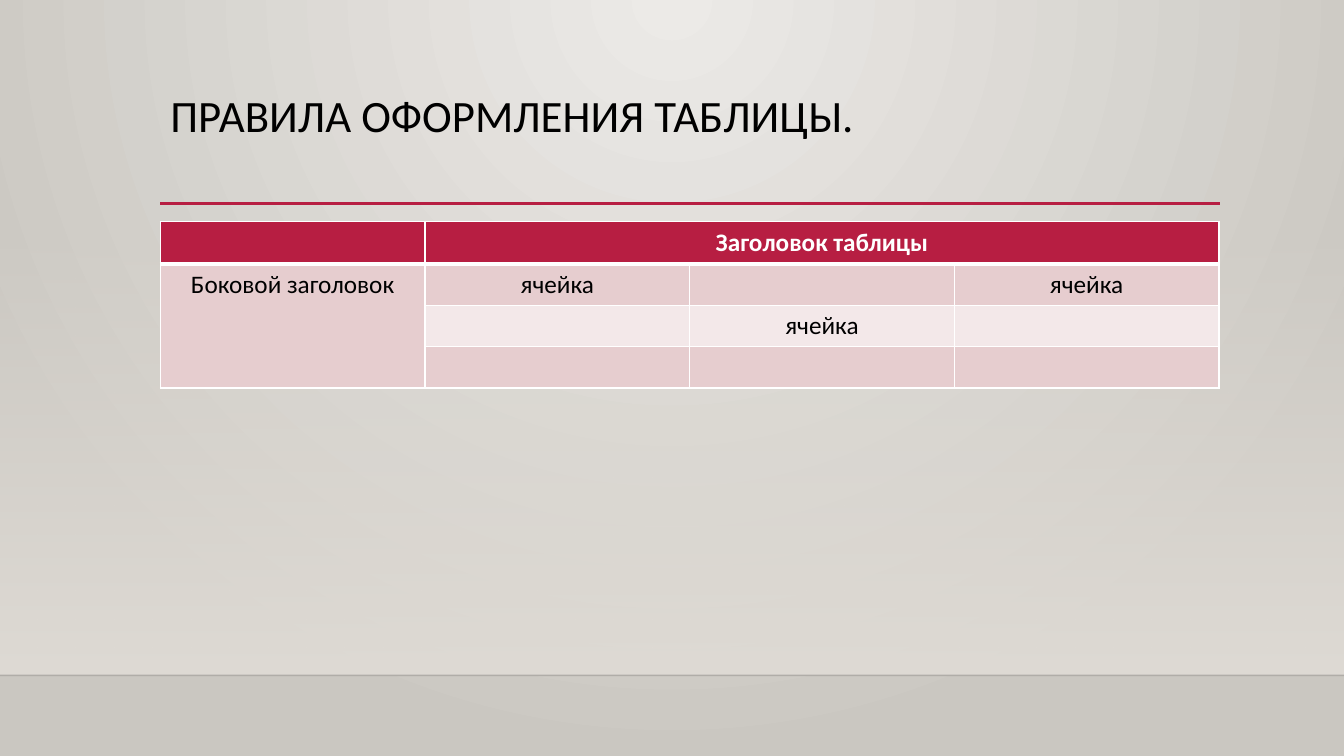
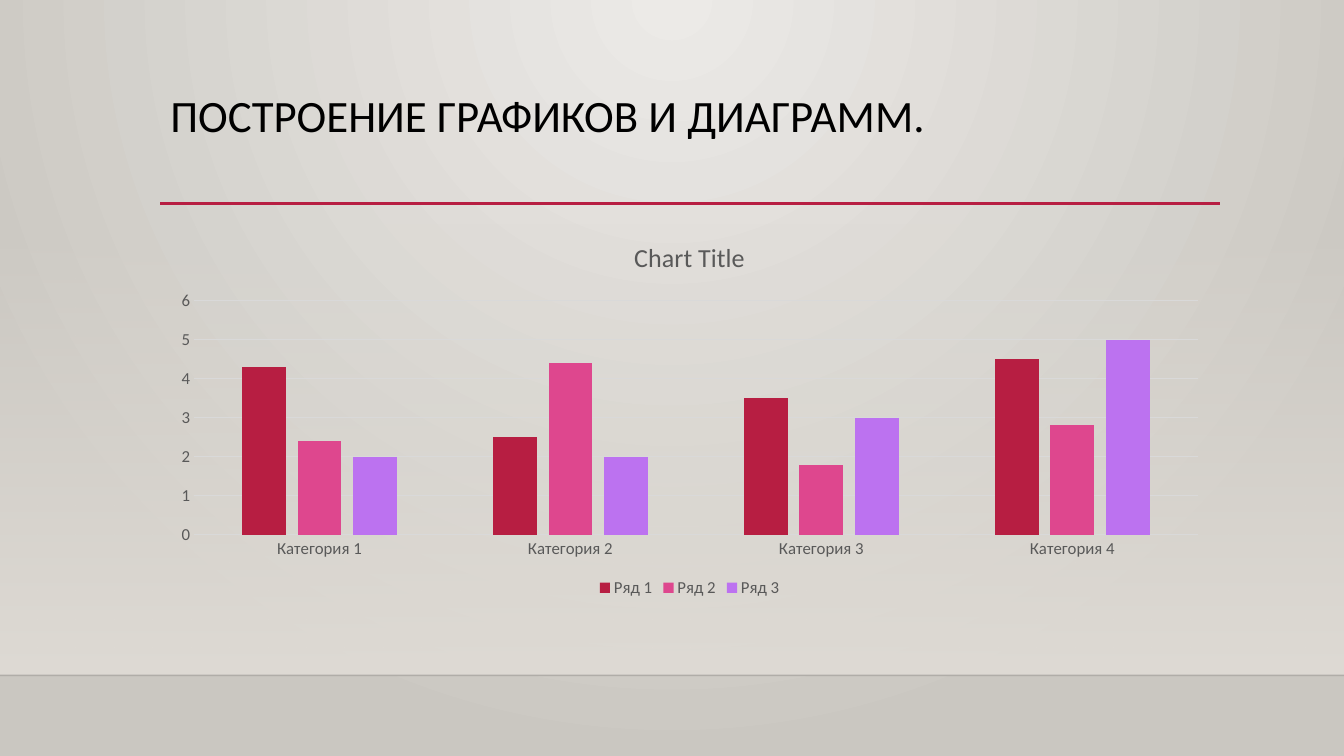
from typing import NamedTuple

from lxml.etree import SubElement
from pptx import Presentation
from pptx.chart.data import CategoryChartData as ChartData
from pptx.dml.color import RGBColor
from pptx.enum.chart import XL_CHART_TYPE as Kind
from pptx.enum.chart import XL_LEGEND_POSITION as Spot
from pptx.enum.chart import XL_TICK_MARK as Tick
from pptx.enum.shapes import MSO_CONNECTOR as Wire
from pptx.enum.shapes import MSO_SHAPE as Shape
from pptx.enum.text import MSO_ANCHOR as Anchor
from pptx.enum.text import MSO_AUTO_SIZE as Fit
from pptx.enum.text import PP_ALIGN as Align
from pptx.oxml.ns import qn
from pptx.slide import Slide
from pptx.util import Inches, Pt

FONT = "Calibri"
BLACK = RGBColor(0x00, 0x00, 0x00)
WHITE = RGBColor(0xFF, 0xFF, 0xFF)
RED = RGBColor(0xB7, 0x1E, 0x42)
PINK = RGBColor(0xDE, 0x47, 0x8E)
LILAC = RGBColor(0xBC, 0x72, 0xF0)
ROSE = RGBColor(0xE6, 0xCD, 0xCF)
BLUSH = RGBColor(0xF3, 0xE8, 0xE9)
GREY = RGBColor(0x59, 0x59, 0x59)
SILVER = RGBColor(0xD9, 0xD9, 0xD9)
LIGHT = RGBColor(0xEC, 0xEA, 0xE7)
STONE = RGBColor(0xCA, 0xC7, 0xC1)
SAND = RGBColor(0xDF, 0xDB, 0xD5)

WIDE, HIGH = 13.33, 7.5
LEFT, TOP, SPAN = 1.59, 2.2, 10.5
FLOOR = 6.7


class Rule(NamedTuple):
    start: float
    end: float
    y: float
    color: RGBColor
    size: float
    alpha: int = 100


class Series(NamedTuple):
    name: str
    color: RGBColor
    vals: tuple[float, ...]


class Entry(NamedTuple):
    row: int
    col: int
    text: str


RULES = (
    Rule(0, WIDE, FLOOR, BLACK, 1, 20),
    Rule(LEFT, 12.1, 2.02, RED, 2.5),
)
ENTRIES = (
    Entry(0, 1, "Заголовок таблицы"),
    Entry(1, 0, "Боковой заголовок"),
    Entry(1, 1, "ячейка"),
    Entry(1, 3, "ячейка"),
    Entry(2, 2, "ячейка"),
)
SERIES = (
    Series("Ряд 1", RED, (4.3, 2.5, 3.5, 4.5)),
    Series("Ряд 2", PINK, (2.4, 4.4, 1.8, 2.8)),
    Series("Ряд 3", LILAC, (2, 2, 3, 5)),
)


def style(font, size: float, color: RGBColor, bold: bool = False) -> None:
    font.name, font.size, font.bold = FONT, Pt(size), bold
    font.color.rgb = color


def blend(fill, *colors: RGBColor) -> None:
    fill.gradient()
    for stop, color in zip(fill.gradient_stops, colors):
        stop.color.rgb = color


def fade(node, alpha: int) -> None:
    color = next(node.iter(qn("a:srgbClr")))
    SubElement(color, qn("a:alpha"), val=str(alpha * 1000))


def paint_master(deck) -> None:
    master = deck.slide_master
    blend(master.background.fill, LIGHT, STONE)
    grad = next(master.element.iter(qn("a:gradFill")))
    grad.remove(grad.find(qn("a:lin")))
    glow = SubElement(grad, qn("a:path"), path="circle")
    SubElement(glow, qn("a:fillToRect"), l="43000", t="0", r="43000", b="100000")


def add_rule(slide: Slide, rule: Rule) -> None:
    y = Inches(rule.y)
    line = slide.shapes.add_connector(
        Wire.STRAIGHT, Inches(rule.start), y, Inches(rule.end), y)
    line.line.color.rgb = rule.color
    line.line.width = Pt(rule.size)
    props = line.element.spPr
    if rule.alpha < 100:
        fade(props, rule.alpha)
    SubElement(props, qn("a:effectLst"))


def add_page(deck, text: str) -> Slide:
    slide = deck.slides.add_slide(deck.slide_layouts[5])
    band = slide.shapes.add_shape(
        Shape.RECTANGLE, 0, Inches(2.21), Inches(WIDE), Inches(FLOOR - 2.21))
    band.shadow.inherit = False
    band.line.fill.background()
    blend(band.fill, SAND, SAND)
    band.fill.gradient_angle = 270
    fade(band.element.spPr, 0)
    for rule in RULES:
        add_rule(slide, rule)
    title = slide.shapes.title
    title.left, title.top = Inches(LEFT), Inches(0.88)
    title.width, title.height = Inches(SPAN), Inches(1.15)
    frame = title.text_frame
    frame.text = text
    frame.auto_size = Fit.NONE
    frame.vertical_anchor = Anchor.TOP
    para = frame.paragraphs[0]
    para.alignment, para.line_spacing = Align.LEFT, 0.9
    style(para.runs[0].font, 32, BLACK)
    return slide


def add_edges(cell, row: int) -> None:
    props = cell._tc.get_or_add_tcPr()
    thick = {(0, "B"), (1, "T")}
    for side in "LRTB":
        size = 3 if (row, side) in thick else 1
        edge = SubElement(props, qn(f"a:ln{side}"), w=str(Pt(size)))
        fill = SubElement(edge, qn("a:solidFill"))
        SubElement(fill, qn("a:srgbClr"), val=str(WHITE))


def add_grid(slide: Slide) -> None:
    rows, cols = 4, 4
    table = slide.shapes.add_table(
        rows, cols, Inches(LEFT), Inches(TOP), Inches(SPAN), Inches(1.63)).table
    table.first_row = table.horz_banding = False
    texts = {(item.row, item.col): item.text for item in ENTRIES}
    for row in range(rows):
        table.rows[row].height = Inches(0.41 if row else 0.42)
        for col in range(cols):
            cell = table.cell(row, col)
            add_edges(cell, row)
            cell.fill.solid()
            side = ROSE if row % 2 or col == 0 else BLUSH
            cell.fill.fore_color.rgb = side if row else RED
            cell.text = texts.get((row, col), "")
            para = cell.text_frame.paragraphs[0]
            para.alignment = Align.CENTER
            style(para.font, 18, BLACK if row else WHITE, row == 0)
            for run in para.runs:
                style(run.font, 18, BLACK if row else WHITE, row == 0)
    table.cell(0, 1).vertical_anchor = Anchor.MIDDLE
    table.cell(0, 1).merge(table.cell(0, 3))
    table.cell(1, 0).merge(table.cell(3, 0))


def add_bars(slide: Slide) -> None:
    data = ChartData()
    data.categories = [f"Категория {num}" for num in range(1, 5)]
    for item in SERIES:
        data.add_series(item.name, item.vals)
    chart = slide.shapes.add_chart(
        Kind.COLUMN_CLUSTERED, Inches(LEFT), Inches(TOP),
        Inches(SPAN), Inches(3.77), data).chart
    style(chart.font, 10, BLACK)
    chart.has_title = True
    frame = chart.chart_title.text_frame
    frame.text = "Chart Title"
    style(frame.paragraphs[0].runs[0].font, 18.6, GREY)
    chart.chart_title.include_in_layout = False
    chart.has_legend = True
    chart.legend.position = Spot.BOTTOM
    chart.legend.include_in_layout = False
    style(chart.legend.font, 12, GREY)
    plot = chart.plots[0]
    plot.gap_width, plot.overlap = 219, -27
    plot.vary_by_categories = False
    for bar, item in zip(plot.series, SERIES):
        bar.format.fill.solid()
        bar.format.fill.fore_color.rgb = item.color
        bar.invert_if_negative = False
    cat, val = chart.category_axis, chart.value_axis
    for axis in (cat, val):
        axis.major_tick_mark = axis.minor_tick_mark = Tick.NONE
        style(axis.tick_labels.font, 12, GREY)
    val.minimum_scale, val.maximum_scale, val.major_unit = 0, 6, 1
    val.format.line.fill.background()
    val.has_major_gridlines = True
    for line in (cat.format.line, val.major_gridlines.format.line):
        line.color.rgb = SILVER
        line.width = Pt(0.75)


def main() -> None:
    deck = Presentation()
    deck.slide_width, deck.slide_height = Inches(WIDE), Inches(HIGH)
    paint_master(deck)
    add_grid(add_page(deck, "ПРАВИЛА ОФОРМЛЕНИЯ ТАБЛИЦЫ."))
    add_bars(add_page(deck, "ПОСТРОЕНИЕ ГРАФИКОВ И ДИАГРАММ."))
    deck.save("out.pptx")


if __name__ == "__main__":
    main()
